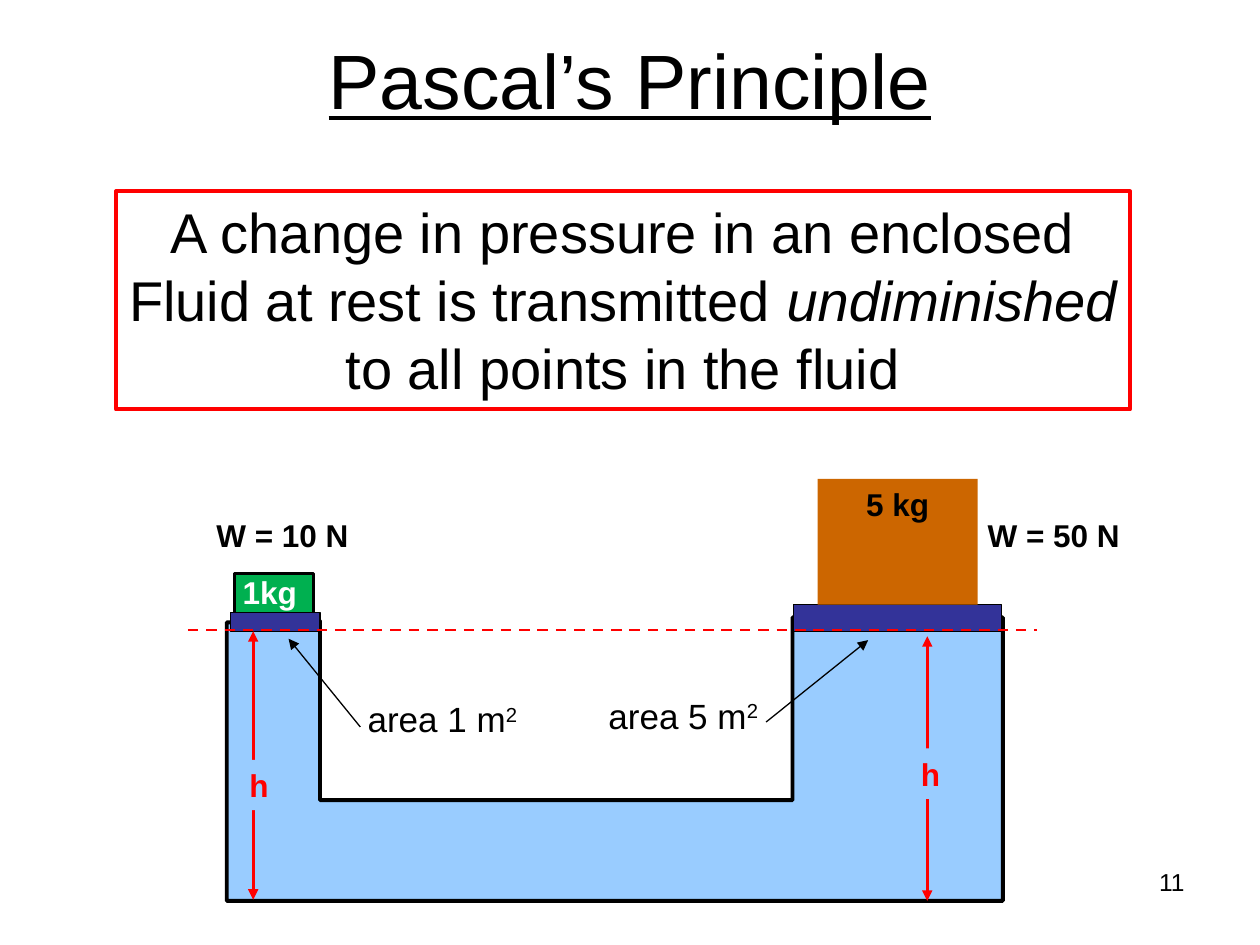
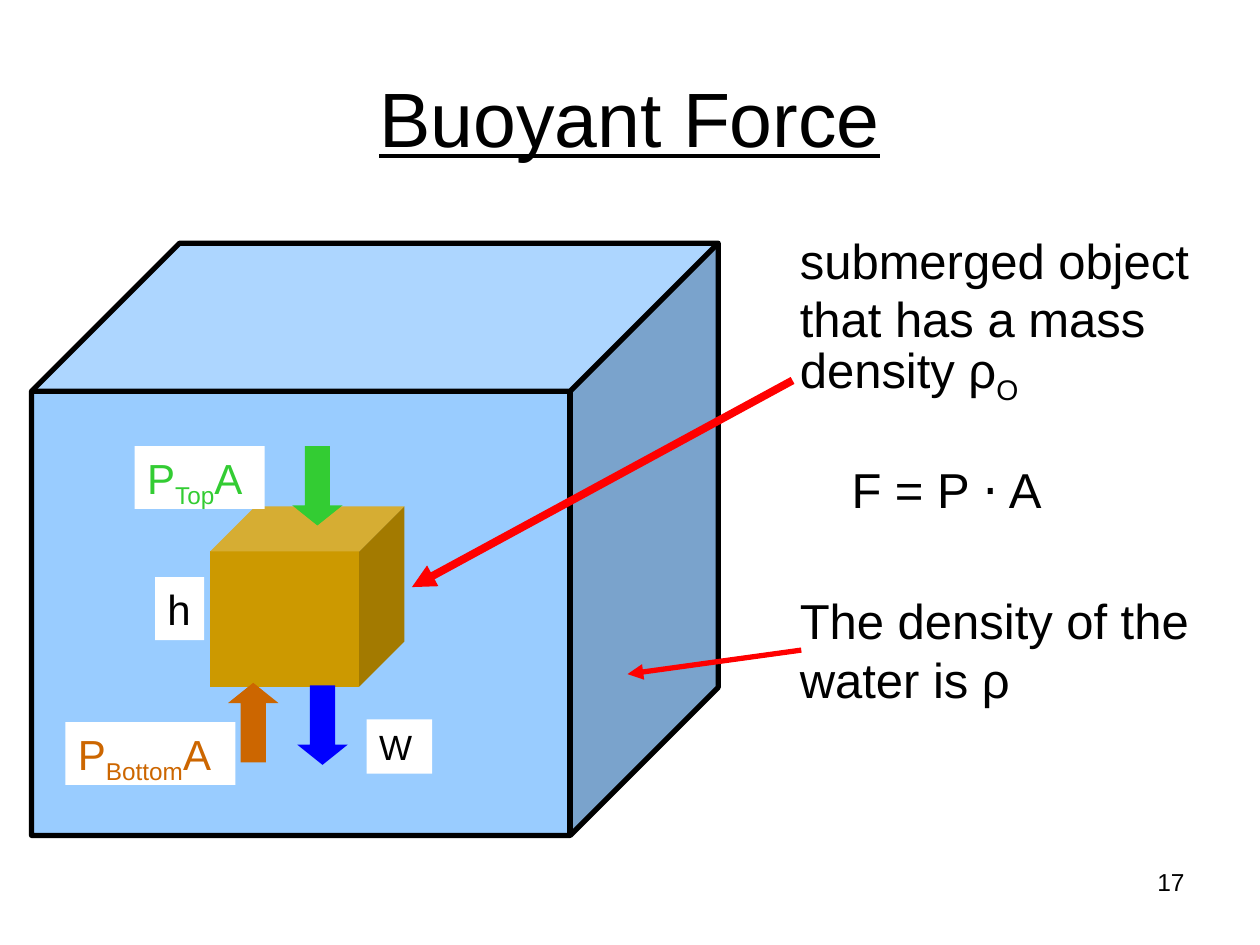
import pptx
import pptx.util
import pptx.dml.color
import pptx.enum.dml
import pptx.enum.shapes
import pptx.enum.text
import pptx.oxml.ns
import lxml.etree

Pt = pptx.util.Pt
RGBColor = pptx.dml.color.RGBColor
SHAPE = pptx.enum.shapes.MSO_SHAPE
ALIGN = pptx.enum.text.PP_ALIGN
ANCHOR = pptx.enum.text.MSO_ANCHOR

BLACK = RGBColor(0x00, 0x00, 0x00)
WHITE = RGBColor(0xFF, 0xFF, 0xFF)
RED = RGBColor(0xFF, 0x00, 0x00)
WATER = RGBColor(0x99, 0xCC, 0xFF)
PISTON = RGBColor(0x33, 0x33, 0x99)
LIGHT_WEIGHT = RGBColor(0x00, 0xB0, 0x50)
ORANGE = RGBColor(0xCC, 0x66, 0x00)
GOLD = RGBColor(0xCC, 0x99, 0x00)
BLUE = RGBColor(0x00, 0x00, 0xFF)
GREEN = RGBColor(0x33, 0xCC, 0x33)

FONT = "Arial"
SUPERSCRIPT, SUBSCRIPT = "30000", "-25000"


def add_box(slide, kind, place, fill=None, line=None, paragraphs=(), size=18,
            color=BLACK, bold=False, align=ALIGN.LEFT, wrap=False, spacing=None):
    """Add a preset shape, or a text box when kind is None.

    A paragraph is a list of runs; a run is (text, baseline, italic)."""
    place = [Pt(length) for length in place]
    if kind is None:
        shape = slide.shapes.add_textbox(*place)
    else:
        shape = slide.shapes.add_shape(kind, *place)
        shape.shadow.inherit = False
        if fill is None:
            shape.fill.background()
        else:
            shape.fill.solid()
            shape.fill.fore_color.rgb = fill
        if line is None:
            shape.line.fill.background()
        else:
            shape.line.color.rgb = line[0]
            shape.line.width = Pt(line[1])
    frame = shape.text_frame
    frame.word_wrap = wrap
    frame.vertical_anchor = ANCHOR.TOP
    for index, runs in enumerate(paragraphs):
        paragraph = frame.add_paragraph() if index else frame.paragraphs[0]
        paragraph.alignment = align
        if spacing:
            paragraph.line_spacing = Pt(spacing)
        for text, baseline, italic in runs:
            run = paragraph.add_run()
            run.text = text
            formats = {"name": FONT, "size": Pt(size), "bold": bold, "italic": italic}
            for name, value in formats.items():
                setattr(run.font, name, value)
            run.font.color.rgb = color
            if baseline:
                run._r.get_or_add_rPr().set("baseline", baseline)
    return shape


def add_line(slide, start, end, color, width, ends=(), dashed=False):
    """Add a straight line; ends names the arrowheads, headEnd before tailEnd."""
    connector = slide.shapes.add_connector(
        pptx.enum.shapes.MSO_CONNECTOR.STRAIGHT,
        *[Pt(length) for length in (*start, *end)])
    connector.line.color.rgb = color
    connector.line.width = Pt(width)
    if dashed:
        connector.line.dash_style = pptx.enum.dml.MSO_LINE.DASH
    outline = connector.line._get_or_add_ln()
    for name in ends:
        lxml.etree.SubElement(outline, pptx.oxml.ns.qn("a:" + name), type="triangle")
    lxml.etree.SubElement(connector._element.spPr, pptx.oxml.ns.qn("a:effectLst"))


presentation = pptx.Presentation()
presentation.slide_width = Pt(720)
presentation.slide_height = Pt(540)

# Titles and page numbers
slides = []
for title_text, page, place in [
    ("Pascal’s Principle", "11", (0, 0, 720, 90)),
    ("Buoyant Force", "17", (36, 21.6, 648, 90)),
]:
    slide = presentation.slides.add_slide(presentation.slide_layouts[5])
    title = slide.shapes.title
    for name, value in zip(("left", "top", "width", "height"), place):
        setattr(title, name, Pt(value))
    title.text_frame.text = title_text
    title.text_frame.vertical_anchor = ANCHOR.MIDDLE
    paragraph = title.text_frame.paragraphs[0]
    paragraph.alignment = ALIGN.CENTER
    font = paragraph.runs[0].font
    for name, value in {"name": FONT, "size": Pt(44), "underline": True}.items():
        setattr(font, name, value)
    font.color.rgb = BLACK
    add_box(slide, None, (516.2, 491.8, 167.8, 37.4), size=14, align=ALIGN.RIGHT,
            wrap=True, paragraphs=[[(page, None, False)]])
    slides.append(slide)
pascal, buoyancy = slides

# Pascal: the principle
add_box(pascal, SHAPE.RECTANGLE, (66.2, 109.4, 579.6, 124.6), line=(RED, 2.25),
        size=32, align=ALIGN.CENTER, spacing=38.6, paragraphs=[
            [("A change in pressure in an enclosed", None, False)],
            [("Fluid at rest is transmitted ", None, False),
             ("undiminished", None, True)],
            [("to all points in the fluid", None, False)]])

# Pascal: light weight, connected tank and pistons
light = add_box(pascal, SHAPE.RECTANGLE, (133.9, 327.6, 45.4, 23), LIGHT_WEIGHT,
                (BLACK, 1.5), [[("1kg", None, False)]], color=WHITE, bold=True,
                align=ALIGN.CENTER, wrap=True)
for name, value in {"left": 0, "top": 0, "right": 5, "bottom": 0}.items():
    setattr(light.text_frame, "margin_" + name, Pt(value))

tank_outline = [(129.6, 355.7), (129.6, 514.8), (573.1, 514.8), (573.1, 352.8),
                (452.9, 352.8), (452.9, 457.2), (182.9, 457.2), (182.9, 355)]
corners = [(Pt(x), Pt(y)) for x, y in tank_outline]
builder = pascal.shapes.build_freeform(*corners[0], scale=1.0)
builder.add_line_segments(corners[1:], close=True)
tank = builder.convert_to_shape()
tank.shadow.inherit = False
tank.fill.solid()
tank.fill.fore_color.rgb = WATER
tank.line.color.rgb = BLACK
tank.line.width = Pt(2.25)

for place in [(131.8, 349.9, 51.1, 10.8), (453.6, 345.6, 118.8, 15.1)]:
    add_box(pascal, SHAPE.RECTANGLE, place, PISTON, (BLACK, 0.75))

# Pascal: piston areas
for left, top, area in [(203, 395.3, "1"), (340.6, 393.1, "5")]:
    add_box(pascal, None, (left, top, 100.8, 31), size=20, paragraphs=[
        [(f"area {area} m", None, False), ("2", SUPERSCRIPT, False)]])

# Pascal: common level and heights
add_line(pascal, (107.3, 360), (592.6, 360), RED, 1.5, dashed=True)
for x, top, bottom, label_left, label_top in [
    (144.7, 360.7, 514.1, 135.4, 434.2),
    (529.9, 363.6, 514.8, 519.1, 427.7),
]:
    add_line(pascal, (x, top), (x, bottom), RED, 1.5, ("headEnd", "tailEnd"))
    add_box(pascal, SHAPE.RECTANGLE, (label_left, label_top, 25.2, 28.8), WATER,
            paragraphs=[[("h", None, False)]], color=RED, bold=True)

# Pascal: forces, leaders and heavy weight
for left, force in [(116.6, "10"), (557.3, "50")]:
    add_box(pascal, None, (left, 291.6, 90, 28.8), bold=True,
            paragraphs=[[(f"W = {force} N", None, False)]])
for start, end in [((205.9, 415.4), (164.9, 365)), ((437.8, 412.6), (496.1, 365.8))]:
    add_line(pascal, start, end, BLACK, 0.75, ("tailEnd",))
add_box(pascal, SHAPE.RECTANGLE, (467.3, 273.6, 91.4, 72), ORANGE, bold=True,
        align=ALIGN.CENTER, wrap=True, paragraphs=[[("5 kg", None, False)]])

# Buoyancy: water and submerged object
add_box(buoyancy, SHAPE.CUBE, (18, 139, 392.4, 338.4), WATER, (BLACK, 3))
add_box(buoyancy, SHAPE.CUBE, (120.2, 289.4, 110.9, 103), GOLD)

# Buoyancy: force arrows
for left, top, color, rotation in [
    (169.9, 391.7, BLUE, 0),
    (130.3, 390.2, ORANGE, 180),
    (167, 254.9, GREEN, 0),
]:
    arrow = add_box(buoyancy, SHAPE.DOWN_ARROW, (left, top, 28.8, 45.4), color)
    arrow.adjustments[1] = 0.4
    arrow.rotation = rotation

# Buoyancy: labels on white
for place, size, color, runs in [
    ((209.5, 411.1, 37.4, 31), 20, BLACK, [("W", None, False)]),
    ((77, 254.9, 74.2, 36), 24, GREEN,
     [("P", None, False), ("Top", SUBSCRIPT, False), ("A", None, False)]),
    ((37.4, 412.6, 97.2, 36), 24, ORANGE,
     [("P", None, False), ("Bottom", SUBSCRIPT, False), ("A", None, False)]),
    ((88.6, 329.8, 28.1, 36), 24, BLACK, [("h", None, False)]),
]:
    add_box(buoyancy, SHAPE.RECTANGLE, place, WHITE, paragraphs=[runs],
            size=size, color=color)

# Buoyancy: explanations and pointers
notes = add_box(buoyancy, None, (450, 128.2, 237.6, 276.5), size=28, wrap=True,
                spacing=33.5, paragraphs=[
                    [("submerged object", None, False)],
                    [("that has a mass", None, False)],
                    [("density ρ", None, False), ("O", SUBSCRIPT, False)],
                    [("The density of the", None, False)],
                    [("water is ρ", None, False)]])
notes.text_frame.paragraphs[3].space_before = Pt(105.4)
add_box(buoyancy, None, (479.5, 259.2, 123.1, 41), size=28,
        paragraphs=[[("F = P ⋅ A", None, False)]])
add_line(buoyancy, (452.9, 217.4), (235.4, 335.5), RED, 4.5, ("tailEnd",))
add_line(buoyancy, (457.9, 371.5), (358.6, 385.2), RED, 3, ("tailEnd",))

presentation.save("out.pptx")
